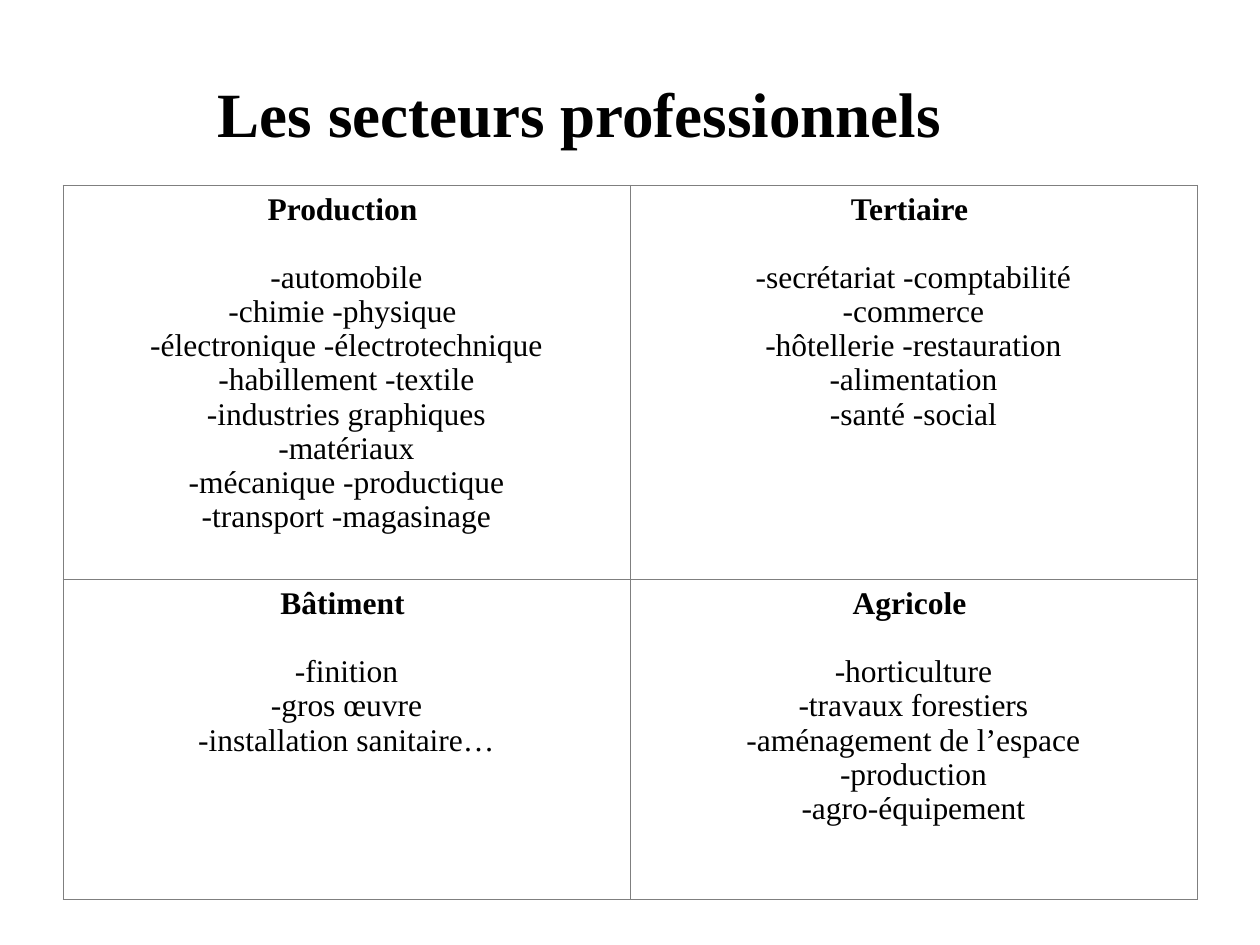
from dataclasses import dataclass

from lxml import etree
from pptx import Presentation
from pptx.dml.color import RGBColor
from pptx.enum.text import MSO_ANCHOR, PP_ALIGN
from pptx.oxml.ns import qn
from pptx.util import Inches, Pt

CENTER = PP_ALIGN.CENTER
MIDDLE, TOP = MSO_ANCHOR.MIDDLE, MSO_ANCHOR.TOP
WIDTH, HEIGHT = Inches(10), Inches(7.5)
FONT, BLACK, GREY = "Times New Roman", "000000", "7F7F7F"
LEFT = 0.05
ROW_HEIGHTS = (3.13, 2.54)


@dataclass(frozen=True)
class Sector:
    """A professional sector and its place in the table."""
    row: int
    col: int
    name: str
    trades: tuple[str, ...]


SECTORS = (
    Sector(0, 0, "Production ", (
        "-automobile", "-chimie -physique ", "-électronique -électrotechnique",
        "-habillement -textile", "-industries graphiques", "-matériaux",
        "-mécanique -productique", "-transport -magasinage")),
    Sector(0, 1, "Tertiaire ", (
        "-secrétariat -comptabilité", "-commerce", "-hôtellerie -restauration",
        "-alimentation", "-santé -social")),
    Sector(1, 0, "Bâtiment ", (
        "-finition", "-gros œuvre", "-installation sanitaire…")),
    Sector(1, 1, "Agricole ", (
        "-horticulture", "-travaux forestiers", "-aménagement de l’espace",
        "-production", "-agro-équipement")),
)


def rgb(value: str) -> RGBColor:
    """Turn a hex string into a colour."""
    return RGBColor.from_string(value)


def set_margins(box, left: float, top: float, right: float, bottom: float) -> None:
    """Set the inner margins of a text frame or cell in inches."""
    box.margin_left, box.margin_top = Inches(left), Inches(top)
    box.margin_right, box.margin_bottom = Inches(right), Inches(bottom)


def style_paragraph(p, size: float, bold: bool, spacing: float) -> None:
    """Centre a paragraph and format its runs."""
    p.alignment = CENTER
    p.line_spacing = spacing
    for r in p.runs:
        r.font.name, r.font.size, r.font.bold = FONT, Pt(size), bold
        r.font.color.rgb = rgb(BLACK)


def add_borders(cell, color: str, width: float) -> None:
    """Draw a thin line on the four sides of a cell."""
    tc_pr = cell._tc.get_or_add_tcPr()
    for side in ("a:lnL", "a:lnR", "a:lnT", "a:lnB"):
        ln = etree.SubElement(tc_pr, qn(side), w=str(Pt(width)))
        fill = etree.SubElement(ln, qn("a:solidFill"))
        etree.SubElement(fill, qn("a:srgbClr"), val=color)


def add_title(slide, text: str) -> None:
    """Add the slide title."""
    sp = slide.shapes.add_textbox(
        int(LEFT * WIDTH), Inches(0.57), int(0.82 * WIDTH), Inches(0.71))
    tf = sp.text_frame
    tf.word_wrap = True
    tf.vertical_anchor = MIDDLE
    set_margins(tf, 0, 0, 0, 0)
    tf.text = text
    style_paragraph(tf.paragraphs[0], 36, True, 0.93)


def fill_cell(cell, sector: Sector) -> None:
    """Write one sector into its cell."""
    set_margins(cell, 0.1, 0.06, 0.1, 0.05)
    cell.vertical_anchor = TOP
    add_borders(cell, GREY, 0.45)
    cell.fill.background()
    tf = cell.text_frame
    tf.text = "\n".join((sector.name, *sector.trades))
    for i, p in enumerate(tf.paragraphs):
        style_paragraph(p, 18, i == 0, 0.98)
    tf.paragraphs[0].space_after = Pt(19.5)


def add_sector_table(slide, sectors: tuple[Sector, ...]) -> None:
    """Add the two-by-two table of sectors."""
    table = slide.shapes.add_table(
        len(ROW_HEIGHTS), 2, int(LEFT * WIDTH), Inches(1.47),
        int((1 - 2 * LEFT) * WIDTH), Inches(sum(ROW_HEIGHTS))).table
    table.first_row = table.horz_banding = False
    for row, height in zip(table.rows, ROW_HEIGHTS):
        row.height = Inches(height)
    for sector in sectors:
        fill_cell(table.cell(sector.row, sector.col), sector)


def main() -> None:
    """Build the slide and save it."""
    prs = Presentation()
    prs.slide_width, prs.slide_height = WIDTH, HEIGHT
    s = prs.slides.add_slide(prs.slide_layouts[6])
    add_title(s, "Les secteurs professionnels")
    add_sector_table(s, SECTORS)
    prs.save("out.pptx")


if __name__ == "__main__":
    main()
